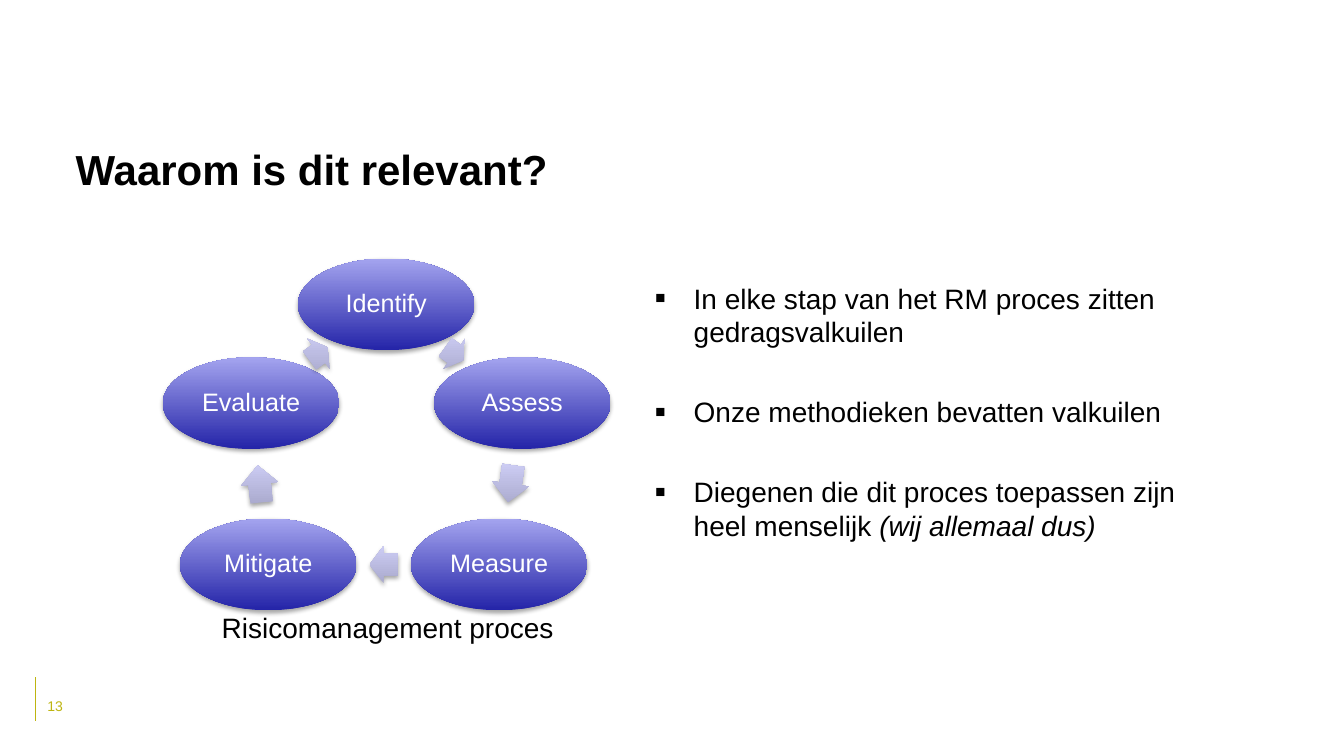
"""Builds a slide with a five-step risk management cycle and three remarks."""
from math import atan2, degrees

from lxml import etree
from pptx import Presentation
from pptx.dml.color import RGBColor
from pptx.enum.shapes import MSO_CONNECTOR, MSO_SHAPE
from pptx.enum.text import MSO_ANCHOR, PP_ALIGN
from pptx.oxml.ns import qn
from pptx.util import Pt

TITLE = "Waarom is dit relevant?"
CAPTION = "Risicomanagement proces"
PAGE_NUMBER = "13"
REMARKS = [
    [("In elke stap van het RM proces zitten gedragsvalkuilen", False)],
    [("Onze methodieken bevatten valkuilen", False)],
    [("Diegenen die dit proces toepassen zijn heel menselijk ", False),
     ("(wij allemaal dus)", True)],
]
# name, centre x, centre y, length of the arrow to the next step
STEPS = [
    ("Identify", 383, 302, 22),
    ("Assess", 518, 400, 37),
    ("Measure", 495, 560, 28),
    ("Mitigate", 266, 560, 37),
    ("Evaluate", 249, 400, 22),
]

EMU_PER_PX = 9144
STEP_WIDTH, STEP_HEIGHT, STEP_INSET = 175, 91, 3
ARROW_HEIGHT = 37
BULLET_INDENT = 38
REMARK_GAP = Pt(33)
FONT = "Arial"
BLACK = RGBColor(0, 0, 0)
WHITE = RGBColor(255, 255, 255)
OLIVE = RGBColor(0xBE, 0xB5, 0x11)
STEP_COLOURS = RGBColor(0x24, 0x24, 0xA8), RGBColor(0xA4, 0xA4, 0xEF)
ARROW_COLOURS = RGBColor(0xAA, 0xAA, 0xCE), RGBColor(0xCD, 0xCD, 0xF4)
OVAL, RIGHT_ARROW = MSO_SHAPE.OVAL, MSO_SHAPE.RIGHT_ARROW
STRAIGHT = MSO_CONNECTOR.STRAIGHT
CENTER, MIDDLE = PP_ALIGN.CENTER, MSO_ANCHOR.MIDDLE


def px(*lengths):
    return [round(length * EMU_PER_PX) for length in lengths]


def set_all(target, values):
    for name, value in values.items():
        setattr(target, name, value)


def set_insets(frame, inset):
    sides = ("margin_left", "margin_top", "margin_right", "margin_bottom")
    set_all(frame, dict.fromkeys(sides, px(inset)[0]))


def add_run(paragraph, text, size, colour, **style):
    run = paragraph.add_run()
    run.text = text
    set_all(run.font, {"name": FONT, "size": Pt(size), **style})
    run.font.color.rgb = colour


def add_box(slide, left, top, width, height, wrap=True):
    frame = slide.shapes.add_textbox(*px(left, top, width, height)).text_frame
    frame.word_wrap = wrap
    if wrap:
        set_insets(frame, 0)
    return frame


def add_centred(slide, kind, x, y, width, height, colours):
    shape = slide.shapes.add_shape(
        kind, *px(x - width / 2, y - height / 2, width, height))
    shape.line.fill.background()
    shape.fill.gradient()
    shape.fill.gradient_angle = 90
    for stop, colour in zip(shape.fill.gradient_stops, colours):
        stop.color.rgb = colour
    shape.shadow.inherit = False
    properties = shape._element.spPr
    properties.find(qn("a:gradFill")).set("rotWithShape", "0")
    shadow = etree.SubElement(
        properties.find(qn("a:effectLst")), qn("a:outerShdw"),
        blurRad="40000", dist="23000", dir="5400000", rotWithShape="0")
    black = etree.SubElement(shadow, qn("a:srgbClr"), val="000000")
    etree.SubElement(black, qn("a:alpha"), val="35000")
    return shape


def add_cycle(slide):
    for index, (name, x, y, arrow_length) in enumerate(STEPS):
        step = add_centred(
            slide, OVAL, x, y, STEP_WIDTH, STEP_HEIGHT, STEP_COLOURS)
        frame = step.text_frame
        set_insets(frame, STEP_INSET)
        set_all(frame, {"word_wrap": True, "vertical_anchor": MIDDLE})
        paragraph = frame.paragraphs[0]
        set_all(paragraph, {"alignment": CENTER, "line_spacing": 0.9})
        add_run(paragraph, name, 18, WHITE)

        _, next_x, next_y, _ = STEPS[(index + 1) % len(STEPS)]
        arrow = add_centred(
            slide, RIGHT_ARROW, (x + next_x) / 2, (y + next_y) / 2,
            arrow_length, ARROW_HEIGHT, ARROW_COLOURS)
        arrow.adjustments[0], arrow.adjustments[1] = 0.6, 0.5
        arrow.rotation = degrees(atan2(next_y - y, next_x - x)) % 360


def add_remarks(slide):
    frame = add_box(slide, 650, 279, 528, 367)
    indent = px(BULLET_INDENT)[0]
    for index, remark in enumerate(REMARKS):
        paragraph = frame.add_paragraph() if index else frame.paragraphs[0]
        properties = paragraph._p.get_or_add_pPr()
        properties.set("marL", str(indent))
        properties.set("indent", str(-indent))
        etree.SubElement(properties, qn("a:buSzPct"), val="60000")
        etree.SubElement(properties, qn("a:buFont"), typeface=FONT)
        etree.SubElement(properties, qn("a:buChar"), char="■")
        if index:
            paragraph.space_before = REMARK_GAP
        for text, italic in remark:
            add_run(paragraph, text, 20, BLACK, italic=italic)


def main():
    deck = Presentation()
    deck.slide_width, deck.slide_height = px(1333, 750)
    slide = deck.slides.add_slide(deck.slide_layouts[6])

    rule = slide.shapes.add_connector(STRAIGHT, *px(35, 672, 35, 715))
    rule.line.color.rgb = OLIVE
    rule.line.width = Pt(0.75)
    etree.SubElement(rule._element.spPr, qn("a:effectLst"))

    title = add_box(slide, 75, 142, 1078, 92)
    add_run(title.paragraphs[0], TITLE, 30, BLACK, bold=True)
    add_cycle(slide)
    add_remarks(slide)
    number = add_box(slide, 47, 692, 71, 43)
    add_run(number.paragraphs[0], PAGE_NUMBER, 10, OLIVE)
    caption = add_box(slide, 210, 601, 352, 44, wrap=False)
    add_run(caption.paragraphs[0], CAPTION, 20, BLACK)
    deck.save("out.pptx")


if __name__ == "__main__":
    main()
